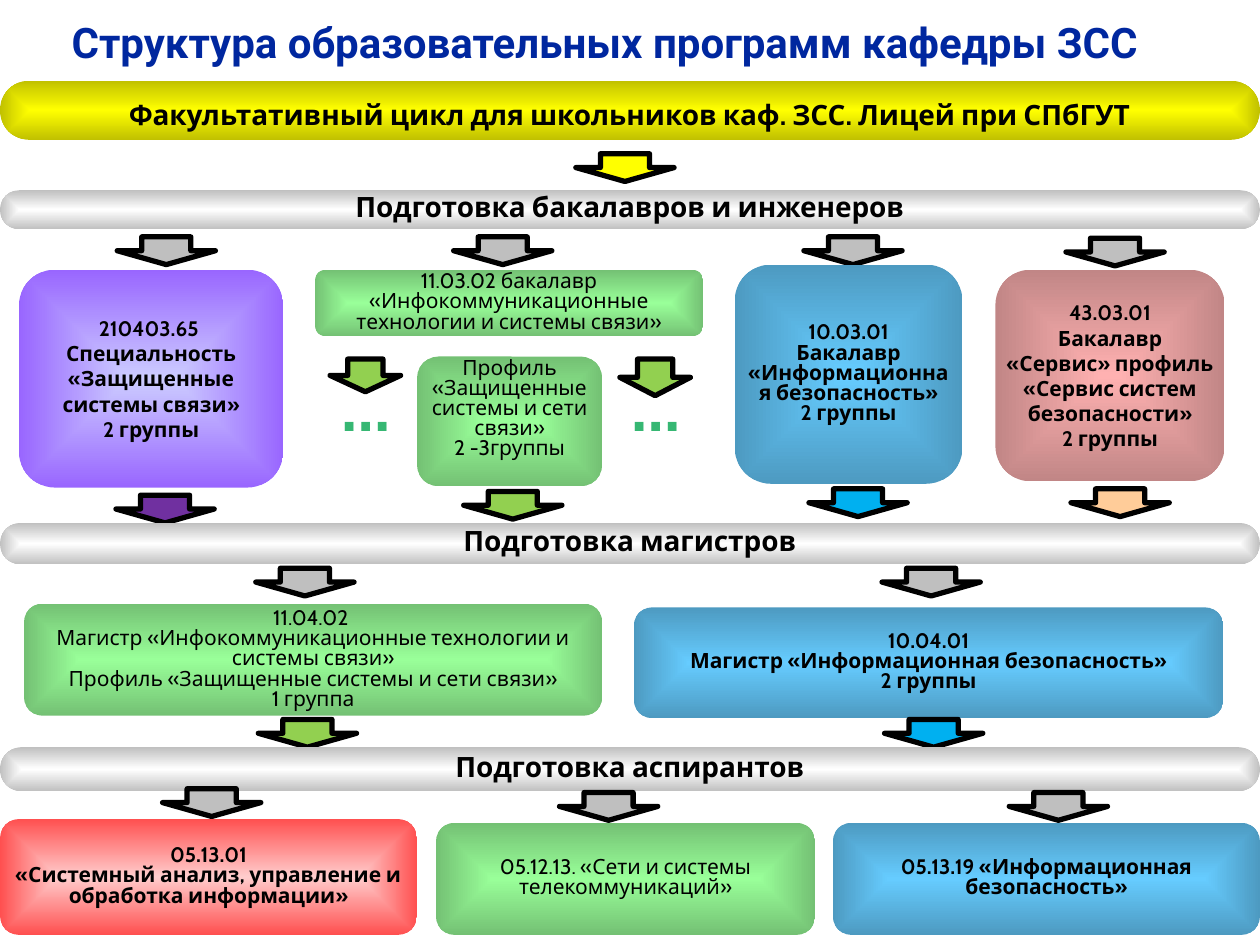
import pptx
import pptx.util
import pptx.dml.color
import pptx.enum.shapes
import pptx.enum.text
import lxml.etree

Inches, Pt = pptx.util.Inches, pptx.util.Pt
Shape = pptx.enum.shapes.MSO_SHAPE
Anchor = pptx.enum.text.MSO_ANCHOR
Align = pptx.enum.text.PP_ALIGN

GREEN = ("99FF99", "74C174")
BLUE = ("66CCFF", "4D9AC1")
PINK = ("FFB1B1", "C18686")
VIOLET = ("CCCCFF", "9966FF")
RED = ("FFCCCC", "FF5050")
YELLOW = ("FFFF00", "C1C100")
SILVER = ("FFFFFF", "C0C0C0")
GREY, LIME, SKY = "BFBFBF", "92D050", "00B0F0"


def color(code):
    """Turn a hex string into a colour."""
    return pptx.dml.color.RGBColor.from_string(code)


def write(frame, lines, size, hue="000000", bold=True, font="Cabin", align=Align.CENTER, space=None):
    """Write one paragraph per line in a single style."""
    frame.text = "\n".join(lines)
    for para in frame.paragraphs:
        para.alignment = align
        para.line_spacing = space
        para.font.size = Pt(size)
        para.font.name = font
        para.font.bold = bold
        para.font.color.rgb = color(hue)


def glow(shape, tones):
    """Fill a shape from its centre to its edge."""
    shape.fill.gradient()
    for stop, tone in zip(shape.fill.gradient_stops, tones):
        stop.color.rgb = color(tone)
    grad = shape._element.spPr.find(pptx.oxml.ns.qn("a:gradFill"))
    grad.remove(grad.find(pptx.oxml.ns.qn("a:lin")))
    way = lxml.etree.SubElement(grad, pptx.oxml.ns.qn("a:path"), path="shape")
    lxml.etree.SubElement(way, pptx.oxml.ns.qn("a:fillToRect"), l="50000", t="50000", r="50000", b="50000")


def card(slide, box, tones, lines, bold=True, space=0.8, anchor=Anchor.MIDDLE, size=12, curve=0.167, foot=0):
    """Place a rounded card with centred text."""
    shape = slide.shapes.add_shape(Shape.ROUNDED_RECTANGLE, *map(Inches, box))
    shape.shadow.inherit = False
    shape.adjustments[0] = curve
    shape.line.fill.background()
    glow(shape, tones)
    frame = shape.text_frame
    frame.word_wrap = True
    frame.vertical_anchor = anchor
    frame.margin_left = frame.margin_right = frame.margin_top = 0
    frame.margin_bottom = Inches(foot)
    write(frame, lines, size, bold=bold, space=space)


def bar(slide, box, text, tones=SILVER, anchor=Anchor.MIDDLE):
    """Place the heading bar of a level."""
    card(slide, box, tones, [text], anchor=anchor, size=16, curve=0.5)


def arrow(slide, left, top, hue, wide=0.78, high=0.22):
    """Place an outlined arrow that points down."""
    shape = slide.shapes.add_shape(Shape.DOWN_ARROW, *map(Inches, (left, top, wide, high)))
    shape.shadow.inherit = False
    shape.fill.solid()
    shape.fill.fore_color.rgb = color(hue)
    shape.line.color.rgb = color("000000")
    shape.line.width = Pt(3)


def label(slide, box, lines, size, hue, font, align, wrap):
    """Place free text."""
    frame = slide.shapes.add_textbox(*map(Inches, box)).text_frame
    frame.word_wrap = wrap
    frame.vertical_anchor = Anchor.MIDDLE
    write(frame, lines, size, hue, font=font, align=align)


def school(slide, x, y, w):
    """Build the level for pupils."""
    bar(slide, (x, y, w, 0.47), "Факультативный цикл для школьников каф. ЗСС. Лицей при СПбГУТ", YELLOW, Anchor.BOTTOM)
    arrow(slide, x + 4.57, y + 0.58, "FFFF00")


def network(slide, x, y):
    """Build the branch of communication profiles."""
    card(slide, (x, y, 3.08, 0.53), GREEN,
         ["11.03.02 бакалавр «Инфокоммуникационные технологии и системы связи»"], False, anchor=Anchor.BOTTOM)
    card(slide, (x + 0.81, y + 0.69, 1.47, 1.03), GREEN,
         ["Профиль", "«Защищенные системы и сети связи»", "2 -3группы"], False, anchor=Anchor.BOTTOM, foot=0.16)
    for left, high, dots in ((0.12, 0.26, 0.03), (2.42, 0.29, 2.33)):
        arrow(slide, x + left, y + 0.71, LIME, 0.56, high)
        label(slide, (x + dots, y + 0.68, 0.76, 0.77), ["…"], 40, "36B773", "Cabin", Align.CENTER, False)


def bachelor(slide, x, y, w):
    """Build the level of bachelors and engineers."""
    bar(slide, (x, y, w, 0.31), "Подготовка бакалавров и инженеров")
    for left, top in ((0.93, 0.37), (3.6, 0.37), (6.38, 0.37), (8.46, 0.38)):
        arrow(slide, x + left, y + top, GREY)
    card(slide, (x + 0.15, y + 0.63, 2.1, 1.73), VIOLET,
         ["210403.65 ", "Специальность «Защищенные системы связи»", "2 группы"], space=None)
    network(slide, x + 2.5, y + 0.63)
    card(slide, (x + 5.83, y + 0.59, 1.81, 1.74), BLUE,
         ["10.03.01", "Бакалавр «Информационная безопасность»", "2 группы"])
    card(slide, (x + 7.9, y + 0.63, 1.82, 1.68), PINK,
         ["43.03.01", "Бакалавр «Сервис» профиль «Сервис систем безопасности»", "2 группы"], space=None)
    for left, top, hue in ((0.92, 2.42, "7030A0"), (3.68, 2.39, LIME), (6.42, 2.37, SKY), (8.5, 2.37, "FFCC99")):
        arrow(slide, x + left, y + top, hue)


def master(slide, x, y, w):
    """Build the level of masters."""
    bar(slide, (x, y, w, 0.33), "Подготовка магистров")
    card(slide, (x + 0.19, y + 0.64, 4.59, 0.89), GREEN,
         ["11.04.02 ", "Магистр «Инфокоммуникационные технологии и системы связи»",
          "Профиль «Защищенные системы и сети связи»", "1 группа"], False, anchor=Anchor.BOTTOM)
    card(slide, (x + 5.03, y + 0.67, 4.68, 0.88), BLUE,
         ["10.04.01", "Магистр «Информационная безопасность»", "2 группы"])
    for left, hue in ((2.03, LIME), (7, SKY)):
        arrow(slide, x + left, y + 0.36, GREY)
        arrow(slide, x + left + 0.02, y + 1.56, hue)


def doctor(slide, x, y, w):
    """Build the level of postgraduates."""
    bar(slide, (x, y, w, 0.35), "Подготовка аспирантов")
    for left, top in ((1.29, 0.33), (4.44, 0.36), (8.01, 0.36)):
        arrow(slide, x + left, y + top, GREY)
    card(slide, (x, y + 0.57, 3.31, 0.92), RED,
         ["05.13.01", "«Системный анализ, управление и обработка информации»"])
    card(slide, (x + 3.46, y + 0.6, 3.01, 0.89), GREEN, ["05.12.13. «Сети и системы телекоммуникаций»"], False)
    card(slide, (x + 6.61, y + 0.6, 3.39, 0.89), BLUE, ["05.13.19 «Информационная безопасность»"])


def main():
    """Build and save the slide."""
    deck = pptx.Presentation()
    deck.slide_width, deck.slide_height = Inches(10), Inches(7.5)
    slide = deck.slides.add_slide(deck.slide_layouts[6])
    label(slide, (0.47, 0.07, 9.28, 0.53), ["Структура образовательных программ кафедры ЗСС"],
          24, "00279F", "Roboto", Align.LEFT, True)
    for build, top in ((school, 0.64), (bachelor, 1.51), (master, 4.15), (doctor, 5.93)):
        build(slide, 0, top, 10)
    deck.save("out.pptx")


if __name__ == "__main__":
    main()
